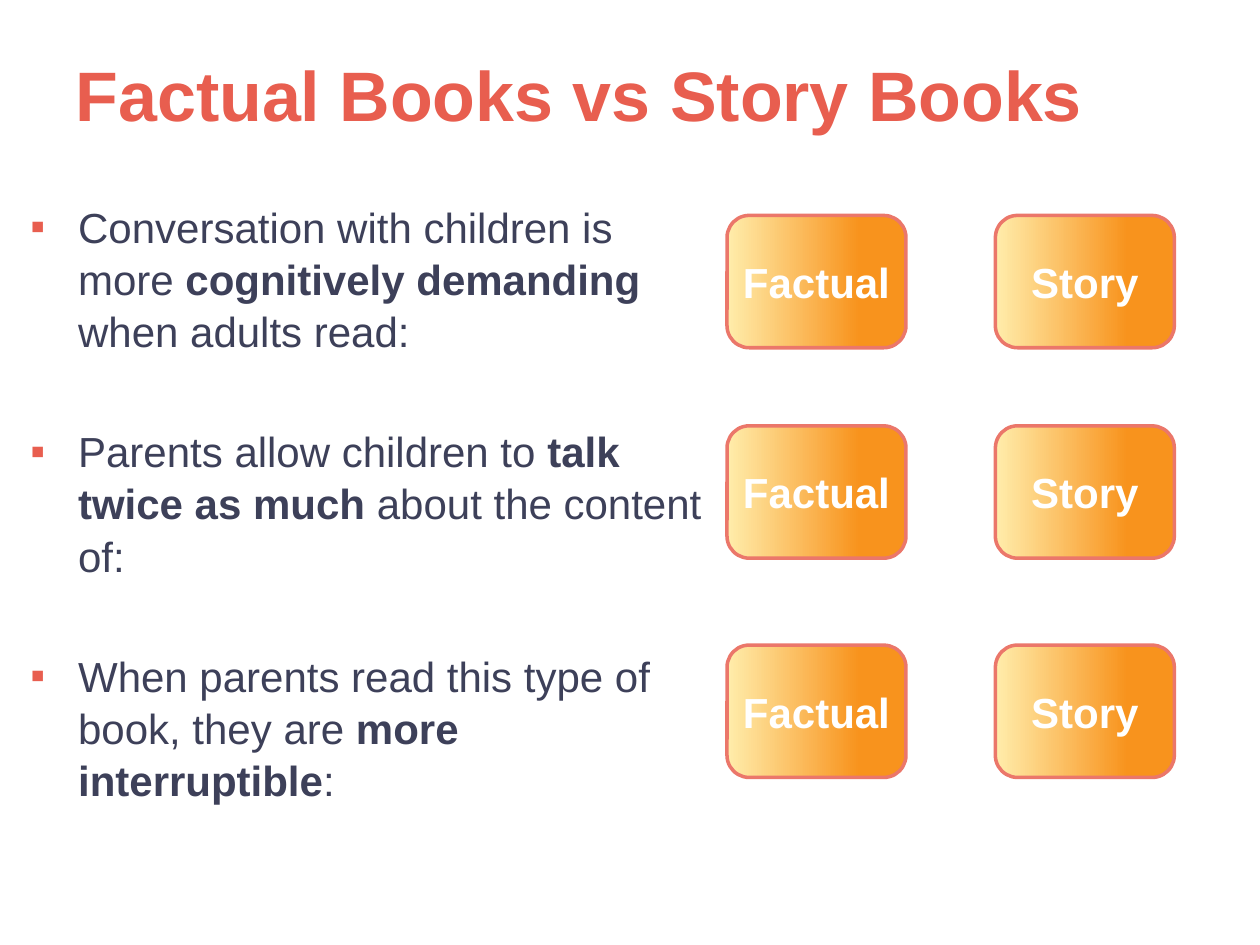
from lxml import etree
from pptx import Presentation
from pptx import util as u
from pptx.dml import color
from pptx.enum import shapes, text
from pptx.oxml import ns

FONT = "Arial"
COLORS = {
    "coral": "E85E4F",
    "ink": "3D4059",
    "cream": "FFEDAB",
    "orange": "F8931D",
    "border": "EB776A",
    "white": "FFFFFF",
}
STATEMENTS = [
    ("Conversation with children is more ", "cognitively demanding ", "when adults read:"),
    ("Parents allow children to ", "talk twice as much ", "about the content of:"),
    ("When parents read this type of book, they are ", "more interruptible", ":"),
]
BOOK_TYPES = ["Factual", "Story"]
ROW_TOPS = [1.71, 3.38, 5.12]


def rgb(name):
    return color.RGBColor.from_string(COLORS[name])


def style_font(paragraph, size, color_name, bold=None):
    paragraph.font.name = FONT
    paragraph.font.size = u.Pt(size)
    paragraph.font.color.rgb = rgb(color_name)
    paragraph.font.bold = bold


def place(shape, left, top, width, height):
    shape.left, shape.top = u.Inches(left), u.Inches(top)
    shape.width, shape.height = u.Inches(width), u.Inches(height)


def add_bullet(paragraph):
    properties = paragraph._p.get_or_add_pPr()
    properties.set("marL", str(u.Inches(0.38)))
    properties.set("indent", str(-u.Inches(0.38)))
    bullet_color = etree.SubElement(properties, ns.qn("a:buClr"))
    etree.SubElement(bullet_color, ns.qn("a:srgbClr"), val=COLORS["coral"])
    etree.SubElement(properties, ns.qn("a:buFont"), typeface=FONT)
    etree.SubElement(properties, ns.qn("a:buChar"), char="▪")


def fill_title(title, left, top, width, height):
    place(title, left, top, width, height)
    frame = title.text_frame
    frame.text = "Factual Books vs Story Books"
    frame.auto_size = text.MSO_AUTO_SIZE.NONE
    frame.vertical_anchor = text.MSO_ANCHOR.TOP
    frame.margin_top = u.Inches(0.11)
    paragraph = frame.paragraphs[0]
    paragraph.alignment = text.PP_ALIGN.LEFT
    style_font(paragraph, 40, "coral", True)


def fill_statements(body, left, top, width, height):
    place(body, left, top, width, height)
    frame = body.text_frame
    frame.auto_size = text.MSO_AUTO_SIZE.NONE
    frame.vertical_anchor = text.MSO_ANCHOR.TOP
    frame.margin_top = u.Inches(0.07)
    for index, parts in enumerate(STATEMENTS):
        paragraph = frame.add_paragraph() if index else frame.paragraphs[0]
        add_bullet(paragraph)
        paragraph.line_spacing = 1.04
        paragraph.space_before = u.Pt(38.5 if index else 0)
        style_font(paragraph, 24, "ink")
        for part, bold in zip(parts, (False, True, False)):
            run = paragraph.add_run()
            run.text = part
            run.font.bold = bold


def add_book_button(slide, label, left, top, width, height):
    button = slide.shapes.add_shape(
        shapes.MSO_SHAPE.ROUNDED_RECTANGLE,
        *(u.Inches(length) for length in (left, top, width, height)),
    )
    button.shadow.inherit = False
    button.fill.gradient()
    button.fill.gradient_angle = 0
    stops = zip(button.fill.gradient_stops, ("cream", "orange"), (0, 0.74))
    for stop, color_name, position in stops:
        stop.color.rgb = rgb(color_name)
        stop.position = position
    button.line.color.rgb = rgb("border")
    button.line.width = u.Pt(2)
    frame = button.text_frame
    frame.margin_left = frame.margin_right = 0
    frame.margin_top = frame.margin_bottom = 0
    frame.vertical_anchor = text.MSO_ANCHOR.MIDDLE
    frame.text = label
    paragraph = frame.paragraphs[0]
    paragraph.alignment = text.PP_ALIGN.CENTER
    style_font(paragraph, 24, "white", True)


def add_button_columns(slide, left, column_pitch):
    for column, label in enumerate(BOOK_TYPES):
        for top in ROW_TOPS:
            add_book_button(slide, label, left + column * column_pitch, top, 1.42, 1.05)


def main():
    presentation = Presentation()
    presentation.slide_width = u.Inches(10)
    presentation.slide_height = u.Inches(7.5)
    slide = presentation.slides.add_slide(presentation.slide_layouts[1])
    fill_title(slide.shapes.title, 0.5, 0.3, 9, 1.25)
    fill_statements(slide.placeholders[1], 0.14, 1.51, 5.63, 4.95)
    add_button_columns(slide, 5.77, 2.13)
    presentation.save("out.pptx")


if __name__ == "__main__":
    main()
